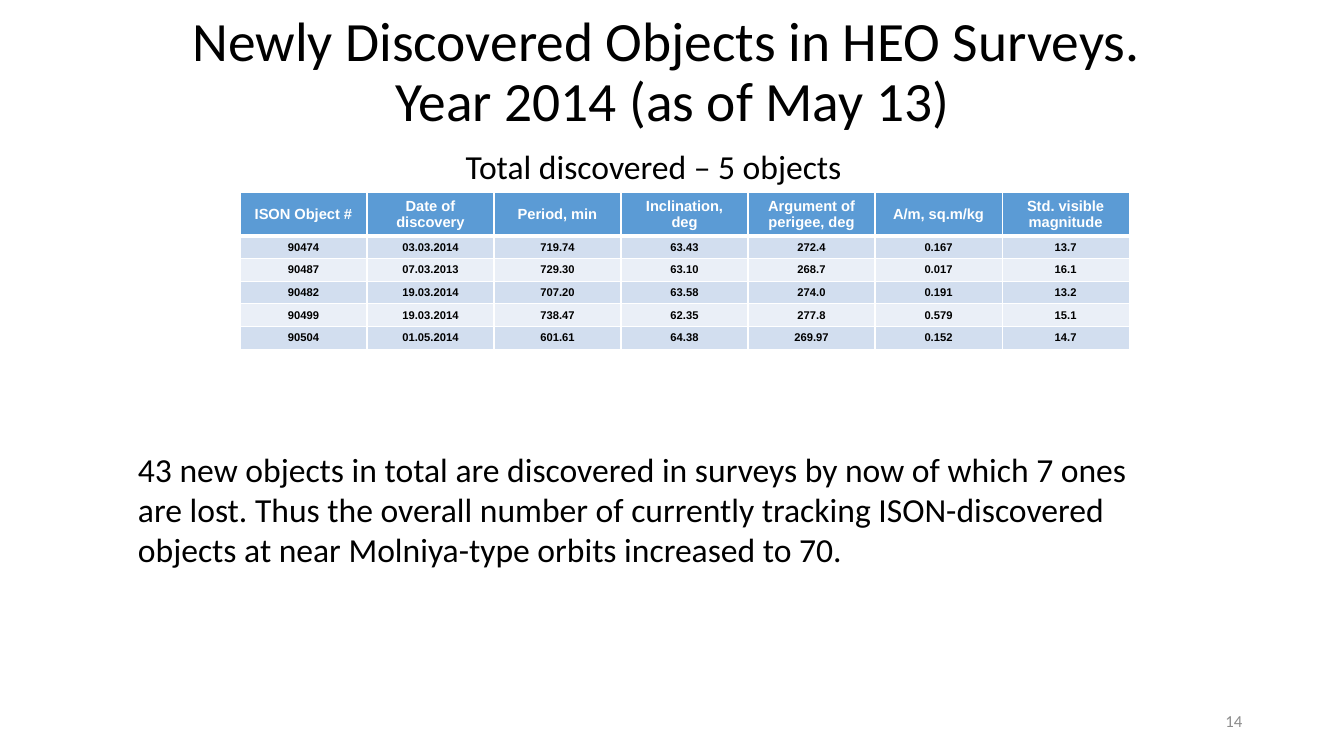
"""Build the slide on newly discovered objects in HEO surveys."""
from dataclasses import dataclass

from lxml import etree
from pptx import Presentation
from pptx.dml.color import RGBColor
from pptx.enum.text import MSO_ANCHOR, PP_ALIGN
from pptx.oxml.ns import qn
from pptx.util import Inches, Pt

LEFT, CENTER, RIGHT = PP_ALIGN.LEFT, PP_ALIGN.CENTER, PP_ALIGN.RIGHT
TOP, MIDDLE = MSO_ANCHOR.TOP, MSO_ANCHOR.MIDDLE
BLANK_LAYOUT = 6
BLACK, WHITE, GRAY = "000000", "FFFFFF", "8C8C8C"
HEADER_FILL, BAND_FILLS = "5B9BD5", ("D2DEEF", "EAEFF7")
TABLE_LEFT, TABLE_TOP, COLUMN_WIDTH = 2.38, 1.91, 1.26
HEADER_HEIGHT, ROW_HEIGHT = 0.42, 0.225

HEADERS = ("ISON Object #", "Date of discovery", "Period, min", "Inclination, deg",
           "Argument of perigee, deg", "A/m, sq.m/kg", "Std. visible magnitude")
OBJECTS = (
    ("90474", "03.03.2014", "719.74", "63.43", "272.4", "0.167", "13.7"),
    ("90487", "07.03.2013", "729.30", "63.10", "268.7", "0.017", "16.1"),
    ("90482", "19.03.2014", "707.20", "63.58", "274.0", "0.191", "13.2"),
    ("90499", "19.03.2014", "738.47", "62.35", "277.8", "0.579", "15.1"),
    ("90504", "01.05.2014", "601.61", "64.38", "269.97", "0.152", "14.7"),
)


@dataclass(frozen=True)
class TextBlock:
    lines: tuple[str, ...]
    left: float
    top: float
    width: float
    height: float
    size: float = 24
    color: str = BLACK
    alignment: PP_ALIGN = LEFT
    anchor: MSO_ANCHOR = TOP
    wrap: bool = True
    line_spacing: float = 1.0


@dataclass(frozen=True)
class CellStyle:
    size: float
    color: str
    fill: str
    bottom_border: float


TEXT_BLOCKS = (
    TextBlock(("Newly Discovered Objects in HEO Surveys. ", "Year 2014 (as of May 13)"),
              0.92, 0.22, 11.5, 1.02, size=39.6, alignment=CENTER, anchor=MIDDLE,
              line_spacing=0.9),
    TextBlock(("14",), 9.42, 6.95, 3, 0.4, size=12, color=GRAY, alignment=RIGHT,
              anchor=MIDDLE),
    TextBlock(("Total discovered – 5 objects",), 4.52, 1.4, 3.97, 0.51, wrap=False),
    TextBlock(("43 new objects in total are discovered in surveys by now of which 7 ones "
               "are lost. Thus the overall number of currently tracking ISON-discovered "
               "objects at near Molniya-type orbits increased to 70.",),
              1.27, 4.4, 10.47, 1.31),
)


def rgb(color: str) -> RGBColor:
    return RGBColor.from_string(color)


def add_run(paragraph, text: str, font_name: str, size: float, color: str,
            bold: bool = False) -> None:
    run = paragraph.add_run()
    run.text = text
    run.font.name = font_name
    run.font.size = Pt(size)
    run.font.bold = bold
    run.font.color.rgb = rgb(color)


def add_text_block(slide, block: TextBlock) -> None:
    shape = slide.shapes.add_textbox(Inches(block.left), Inches(block.top),
                                     Inches(block.width), Inches(block.height))
    frame = shape.text_frame
    frame.word_wrap = block.wrap
    frame.vertical_anchor = block.anchor
    paragraph = frame.paragraphs[0]
    paragraph.alignment = block.alignment
    paragraph.line_spacing = block.line_spacing
    for index, line in enumerate(block.lines):
        if index:
            paragraph.add_line_break()
        add_run(paragraph, line, "Calibri", block.size, block.color)


def add_border(cell, side: str, width: float) -> None:
    properties = cell._tc.get_or_add_tcPr()
    line = etree.SubElement(properties, qn(f"a:ln{side}"), w=str(Pt(width)))
    fill = etree.SubElement(line, qn("a:solidFill"))
    etree.SubElement(fill, qn("a:srgbClr"), val=WHITE)


def fill_cell(cell, text: str, style: CellStyle, top_border: float) -> None:
    borders = {"L": 1, "R": 1, "T": top_border, "B": style.bottom_border}
    for side, width in borders.items():
        add_border(cell, side, width)
    cell.fill.solid()
    cell.fill.fore_color.rgb = rgb(style.fill)
    cell.vertical_anchor = MIDDLE
    cell.margin_top = cell.margin_bottom = Inches(0.04)
    paragraph = cell.text_frame.paragraphs[0]
    paragraph.alignment = CENTER
    add_run(paragraph, text, "Arial", style.size, style.color, bold=True)


def add_objects_table(slide) -> None:
    rows = (HEADERS, *OBJECTS)
    height = HEADER_HEIGHT + ROW_HEIGHT * len(OBJECTS)
    table = slide.shapes.add_table(
        len(rows), len(HEADERS), Inches(TABLE_LEFT), Inches(TABLE_TOP),
        Inches(COLUMN_WIDTH * len(HEADERS)), Inches(height)).table
    for column in table.columns:
        column.width = Inches(COLUMN_WIDTH)
    header_style = CellStyle(10.5, WHITE, HEADER_FILL, 3)
    band_styles = [CellStyle(8, BLACK, fill, 1) for fill in BAND_FILLS]
    top_border = 1
    for index, values in enumerate(rows):
        style = band_styles[(index - 1) % 2] if index else header_style
        table.rows[index].height = Inches(ROW_HEIGHT if index else HEADER_HEIGHT)
        for column_index, text in enumerate(values):
            fill_cell(table.cell(index, column_index), text, style, top_border)
        top_border = style.bottom_border


def main() -> None:
    presentation = Presentation()
    presentation.slide_width = Inches(13.33)
    presentation.slide_height = Inches(7.5)
    slide = presentation.slides.add_slide(presentation.slide_layouts[BLANK_LAYOUT])
    for block in TEXT_BLOCKS:
        add_text_block(slide, block)
    add_objects_table(slide)
    presentation.save("out.pptx")


if __name__ == "__main__":
    main()
